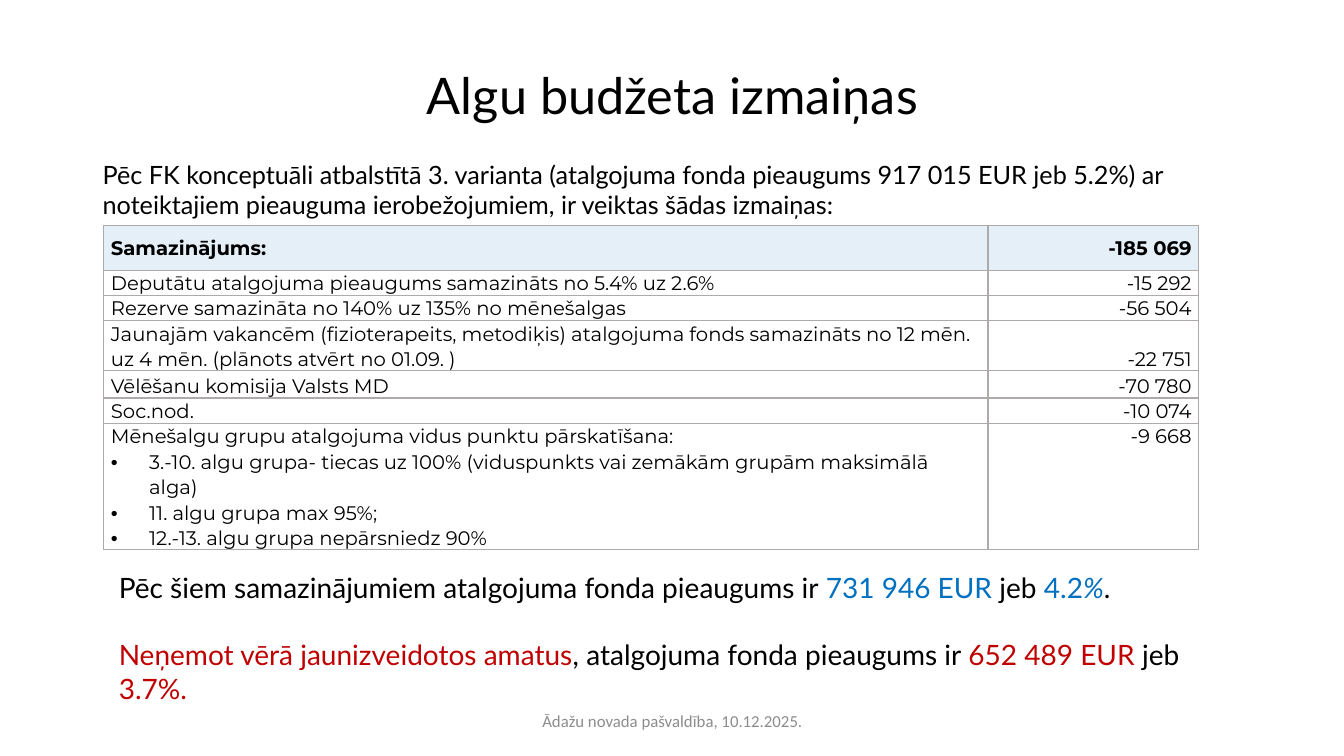
import pptx
import pptx.util
import pptx.dml.color
import pptx.enum.text
from lxml import etree
from pptx.oxml.ns import qn

Inches = pptx.util.Inches
Pt = pptx.util.Pt
ALIGN = pptx.enum.text.PP_ALIGN
ANCHOR = pptx.enum.text.MSO_ANCHOR

COLORS = {"text": "000000", "blue": "0070C0", "red": "C00000",
          "foot": "8C8C8C", "head": "BDD7EE", "rule": "AEAAAA"}

ROWS = [
    (0.44, ["Samazinājums:"], "-185 069"),
    (0.21, ["Deputātu atalgojuma pieaugums samazināts no 5.4% uz 2.6%"], "-15 292"),
    (0.21, ["Rezerve samazināta no 140% uz 135% no mēnešalgas"], "-56 504"),
    (0.21, ["Jaunajām vakancēm (fizioterapeits, metodiķis) atalgojuma fonds "
            "samazināts no 12 mēn. uz 4 mēn. (plānots atvērt no 01.09. )"], "-22 751"),
    (0.27, ["Vēlēšanu komisija Valsts MD"], "-70 780"),
    (0.21, ["Soc.nod."], "-10 074"),
    (0.88, ["Mēnešalgu grupu atalgojuma vidus punktu pārskatīšana:",
            "3.-10. algu grupa- tiecas uz 100% (viduspunkts vai zemākām grupām "
            "maksimālā alga)",
            "11. algu grupa max 95%;",
            "12.-13. algu grupa nepārsniedz 90%"], "-9 668"),
]


def add_run(para, text, size, font="Lato", color="text", bold=False, italic=False):
    run = para.add_run()
    run.text = text
    run.font.size = Pt(size)
    run.font.name = font
    run.font.bold = bold
    run.font.italic = italic
    run.font.color.rgb = pptx.dml.color.RGBColor.from_string(COLORS[color])


def add_box(slide, box, anchor=ANCHOR.TOP):
    frame = slide.shapes.add_textbox(*map(Inches, box)).text_frame
    frame.word_wrap = True
    frame.vertical_anchor = anchor
    return frame


def add_title(slide, box):
    para = add_box(slide, box, ANCHOR.MIDDLE).paragraphs[0]
    para.alignment = ALIGN.CENTER
    para.line_spacing = 0.9
    add_run(para, "Algu budžeta izmaiņas", 36)


def add_intro(slide, box):
    para = add_box(slide, box).paragraphs[0]
    add_run(para, "Pēc FK konceptuāli atbalstītā 3. varianta (atalgojuma fonda "
            "pieaugums 917 015 EUR jeb 5.2%) ar noteiktajiem pieauguma "
            "ierobežojumiem, ir veiktas šādas izmaiņas:", 18)


def add_result(slide, box):
    frame = add_box(slide, box)
    total = frame.paragraphs[0]
    add_run(total, "Pēc šiem samazinājumiem atalgojuma fonda pieaugums ir ", 20)
    add_run(total, "731 946 EUR ", 20, color="blue")
    add_run(total, "jeb", 20)
    add_run(total, " 4.2", 20, color="blue")
    add_run(total, "%", 20, color="blue", italic=True)
    add_run(total, ".", 20)
    rest = frame.add_paragraph()
    rest.space_before = Pt(24)
    for text, color in [("Neņemot vērā jaunizveidotos amatus", "red"),
                        (", atalgojuma fonda pieaugums ir ", "text"),
                        ("652 489 EUR ", "red"), ("jeb ", "text"),
                        ("3.7%.", "red")]:
        add_run(rest, text, 20, color=color)


def add_foot(slide, box):
    para = add_box(slide, box, ANCHOR.MIDDLE).paragraphs[0]
    para.alignment = ALIGN.CENTER
    add_run(para, "Ādažu novada pašvaldība, 10.12.2025.", 12, "Calibri", "foot")


def add_fill(parent, color):
    fill = etree.SubElement(parent, qn("a:solidFill"))
    return etree.SubElement(fill, qn("a:srgbClr"), val=COLORS[color])


def style_cell(cell, head, anchor):
    """Set margins, borders and fill of one table cell."""
    cell.margin_left = cell.margin_right = Inches(0.07)
    cell.margin_top = cell.margin_bottom = 0
    cell.vertical_anchor = anchor
    props = cell._tc.get_or_add_tcPr()
    for side in ("a:lnL", "a:lnR", "a:lnT", "a:lnB"):
        add_fill(etree.SubElement(props, qn(side), w=str(Pt(1))), "rule")
    if head:
        etree.SubElement(add_fill(props, "head"), qn("a:alpha"), val="39000")
    else:
        cell.fill.background()


def add_bullet(para):
    props = para._p.get_or_add_pPr()
    props.set("marL", str(Inches(0.38)))
    props.set("indent", str(-Inches(0.38)))
    etree.SubElement(props, qn("a:buFont"), typeface="Arial")
    etree.SubElement(props, qn("a:buChar"), char="•")


def fill_cell(cell, lines, align, bold):
    frame = cell.text_frame
    for i, line in enumerate(lines):
        para = frame.add_paragraph() if i else frame.paragraphs[0]
        para.alignment = align
        para.line_spacing = 1.07
        if i:
            if i == len(lines) - 1:
                para.space_after = Pt(8)
            add_bullet(para)
        add_run(para, line, 14, "Montserrat", bold=bold)


def add_cuts(slide, box):
    """Place the table of reductions."""
    table = slide.shapes.add_table(len(ROWS), 2, *map(Inches, box)).table
    table.first_row = table.horz_banding = False
    for col, width in zip(table.columns, (8.77, 2.09)):
        col.width = Inches(width)
    for i, (height, lines, value) in enumerate(ROWS):
        table.rows[i].height = Inches(height)
        head = i == 0
        label, amount = table.rows[i].cells
        anchor = ANCHOR.MIDDLE if head else ANCHOR.BOTTOM
        style_cell(label, head, anchor)
        style_cell(amount, head, ANCHOR.TOP if len(lines) > 1 else anchor)
        fill_cell(label, lines, ALIGN.LEFT, head)
        fill_cell(amount, [value], ALIGN.RIGHT, head)


def main():
    deck = pptx.Presentation()
    deck.slide_width = Inches(13.33)
    deck.slide_height = Inches(7.5)
    slide = deck.slides.add_slide(deck.slide_layouts[6])
    add_title(slide, (0.92, 0.4, 11.5, 1.15))
    add_foot(slide, (4.42, 6.95, 4.5, 0.4))
    add_intro(slide, (0.92, 1.53, 11.38, 1.01))
    add_result(slide, (1.08, 5.61, 10.86, 1.11))
    add_cuts(slide, (1.03, 2.24, 10.86, 2.43))
    deck.save("out.pptx")


if __name__ == "__main__":
    main()
